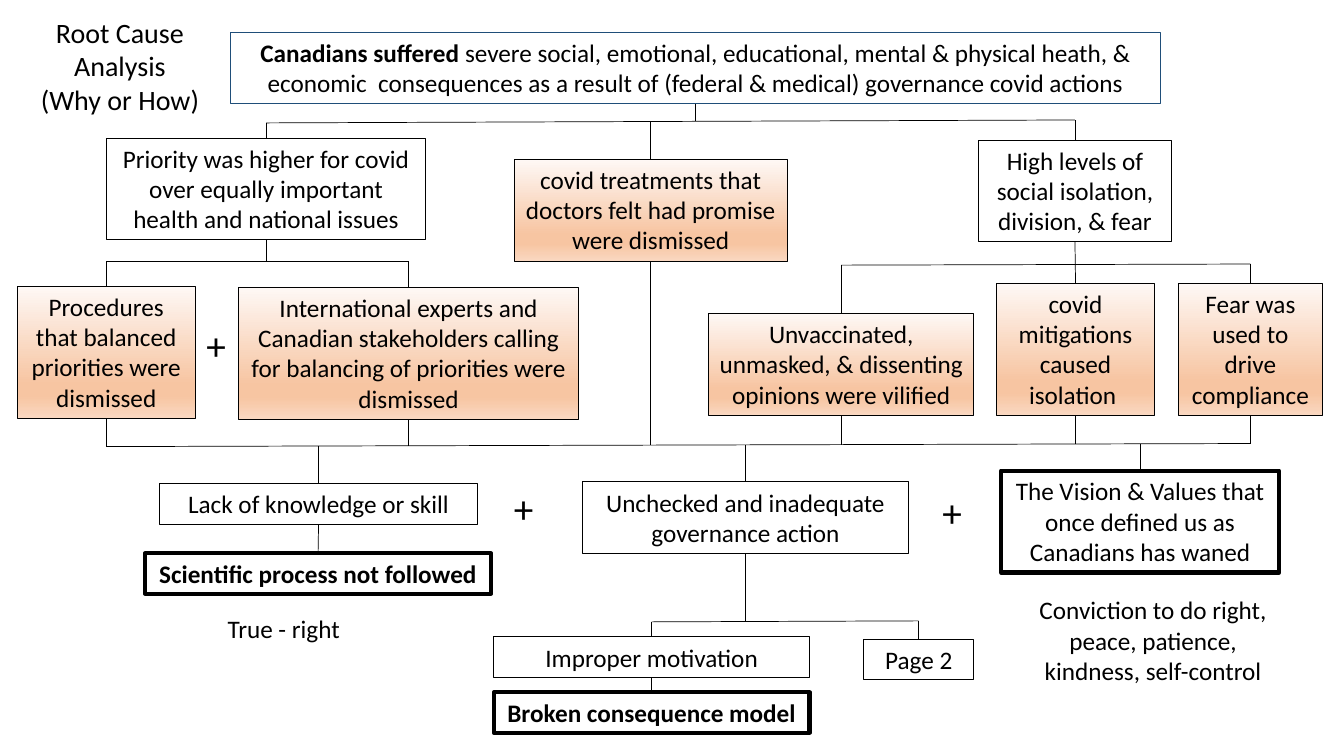
from copy import deepcopy
from dataclasses import dataclass

from lxml.etree import SubElement as Sub
from pptx import Presentation
from pptx.dml.color import RGBColor as Rgb
from pptx.enum.shapes import MSO_CONNECTOR as Conn, MSO_SHAPE as Form
from pptx.enum.text import MSO_ANCHOR as Anchor, MSO_AUTO_SIZE as Fit, PP_ALIGN as Align
from pptx.oxml.ns import qn
from pptx.util import Pt


@dataclass(frozen=True)
class Theme:
    font: str = "Calibri"
    ink: str = "000000"
    navy: str = "1F4E79"
    glow: tuple = ((0, "FEF8F5"), (0.74, "F7C5A2"), (0.83, "F7C5A2"), (1, "FAD8C1"))
    body: float = 18
    head: float = 20
    plus: float = 28
    thin: float = 0.5
    edge: float = 0.75
    bold: float = 3


TOP, BASE = 0, 2


def apply(item, form):
    for key, value in form.items():
        setattr(item, key, value)


def place(item, spot):
    apply(item, dict(zip(("left", "top", "width", "height"), map(Pt, spot))))


def mid(box):
    return (box.left + box.width / 2) / Pt(1)


class Chart:
    def __init__(self, slide, theme):
        self.slide, self.theme = slide, theme
        self.shapes = slide.shapes

    def letter(self, item, text, size, lead="", bold=False, align=Align.CENTER, wrap=True):
        frame = item.text_frame
        apply(frame, {"word_wrap": wrap, "vertical_anchor": Anchor.TOP,
                      "auto_size": Fit.SHAPE_TO_FIT_TEXT})
        for row, line in enumerate(text.split("\n")):
            para = frame.add_paragraph() if row else frame.paragraphs[0]
            para.alignment = align
            for part, heavy in ((lead, True), (line, bold)):
                if part:
                    run = para.add_run()
                    run.text = part
                    apply(run.font, {"name": self.theme.font, "size": Pt(size), "bold": heavy})
                    run.font.color.rgb = Rgb.from_string(self.theme.ink)

    def title(self, spot, text):
        item = self.shapes.title
        place(item, spot)
        self.letter(item, text, self.theme.head)

    def label(self, spot, text, size, **form):
        item = self.shapes.add_textbox(*map(Pt, spot))
        self.letter(item, text, size, **form)

    def box(self, spot, text, glow=False, edge=None, hue=None, **form):
        item = self.shapes.add_shape(Form.RECTANGLE, *map(Pt, spot))
        item.shadow.inherit = False
        if glow:
            self.shade(item)
        else:
            item.fill.background()
        item.line.width = Pt(edge or self.theme.edge)
        item.line.color.rgb = Rgb.from_string(hue or self.theme.ink)
        self.letter(item, text, self.theme.body, **form)
        return item

    def shade(self, item):
        fill = item.fill
        fill.gradient()
        fill.gradient_angle = 270
        stops = item._element.spPr.find(".//" + qn("a:gsLst"))
        while len(stops) < len(self.theme.glow):
            stops.append(deepcopy(stops[0]))
        for stop, (where, hue) in zip(fill.gradient_stops, self.theme.glow):
            stop.position = where
            stop.color.rgb = Rgb.from_string(hue)

    def line(self, start, end):
        item = self.shapes.add_connector(Conn.STRAIGHT, *map(Pt, (*start, *end)))
        item.line.width = Pt(self.theme.thin)
        item.line.color.rgb = Rgb.from_string(self.theme.ink)
        Sub(item._element.spPr, qn("a:effectLst"))
        return item

    def link(self, upper, lower):
        item = self.line((0, 0), (0, 0))
        item.begin_connect(upper, BASE)
        item.end_connect(lower, TOP)

    def rail(self, above, below, left, right):
        spots = [mid(box) for box in above + below]
        low, high = min(spots), max(spots)
        self.line((low, left), (high, right))
        for group, side in ((above, BASE), (below, TOP)):
            for box in group:
                spot = mid(box)
                level = left + (right - left) * (spot - low) / (high - low)
                stem = self.line((spot, level), (spot, level))
                stem.begin_connect(box, side)


def main():
    deck = Presentation()
    apply(deck, {"slide_width": Pt(960), "slide_height": Pt(540)})
    theme = Theme()
    chart = Chart(deck.slides.add_slide(deck.slide_layouts[5]), theme)

    chart.title((18, 7.2, 135.4, 79.9), "Root Cause\nAnalysis\n(Why or How)")
    harm = chart.box(
        (164.9, 23, 663.8, 51.1),
        "severe social, emotional, educational, mental & physical heath, & "
        "economic  consequences as a result of (federal & medical) governance covid actions",
        lead="Canadians suffered ", hue=theme.navy)
    first = chart.box((76.3, 98.6, 227.5, 72.7),
                      "Priority was higher for covid over equally important health and national issues")
    cure = chart.box((367.2, 113.8, 195.1, 72.7),
                     "covid treatments that doctors felt had promise were dismissed", glow=True)
    split = chart.box((699.1, 100.1, 137.5, 72.7),
                      "High levels of social isolation, division, & fear")

    steps = chart.box((12.2, 204.5, 127.4, 94.3),
                      "Procedures that balanced priorities were dismissed", glow=True)
    calls = chart.box((170.6, 205.2, 242.6, 94.3),
                      "International experts and Canadian stakeholders calling "
                      "for balancing of priorities were dismissed", glow=True)
    blame = chart.box((506.2, 223.9, 189.4, 72.7),
                      "Unvaccinated, unmasked, & dissenting opinions were vilified", glow=True)
    alone = chart.box((712.1, 202.3, 112.3, 94.3),
                      "covid mitigations caused isolation ", glow=True)
    fear = chart.box((841.7, 202.3, 103, 94.3),
                     "Fear was used to drive compliance", glow=True)

    skill = chart.box((113.8, 345.6, 227.5, 28.8), "Lack of knowledge or skill")
    rule = chart.box((416.2, 344.2, 232.6, 51.1), "Unchecked and inadequate governance action")
    creed = chart.box((715, 336.2, 198.7, 72.7),
                      "The Vision & Values that once defined us as Canadians has waned",
                      edge=theme.bold)
    proof = chart.box((103.7, 395.3, 247, 28.8), "Scientific process not followed",
                      edge=theme.bold, bold=True)
    drive = chart.box((352.8, 455, 225.4, 28.8), "Improper motivation")
    page = chart.box((617, 456.5, 78.5, 28.8), "Page 2")
    model = chart.box((352.8, 494.6, 225.4, 28.8), "Broken consequence model",
                      edge=theme.bold, bold=True)

    chart.rail([harm], [first, cure, split], 87.8, 85.7)
    chart.rail([first], [steps, calls], 186.5, 186.5)
    chart.rail([], [blame, fear], 189.4, 188.6)
    chart.rail([steps, calls, cure, blame, alone, fear], [skill, rule, creed], 319, 316.8)
    chart.rail([rule], [drive, page], 444.2, 443.5)
    for upper, lower in ((split, alone), (skill, proof), (drive, model)):
        chart.link(upper, lower)

    for left, top in ((140.4, 226.1), (360, 342.7), (666, 345.6)):
        chart.label((left, top, 15.1, 41), "+", theme.plus, align=Align.LEFT)
    chart.label((155.5, 434.2, 95.8, 28.8), "True - right", theme.body,
                align=Align.LEFT, wrap=False)
    chart.label((731.5, 421.2, 184.3, 72.7),
                "Conviction to do right, peace, patience, kindness, self-control", theme.body)
    deck.save("out.pptx")


if __name__ == "__main__":
    main()
